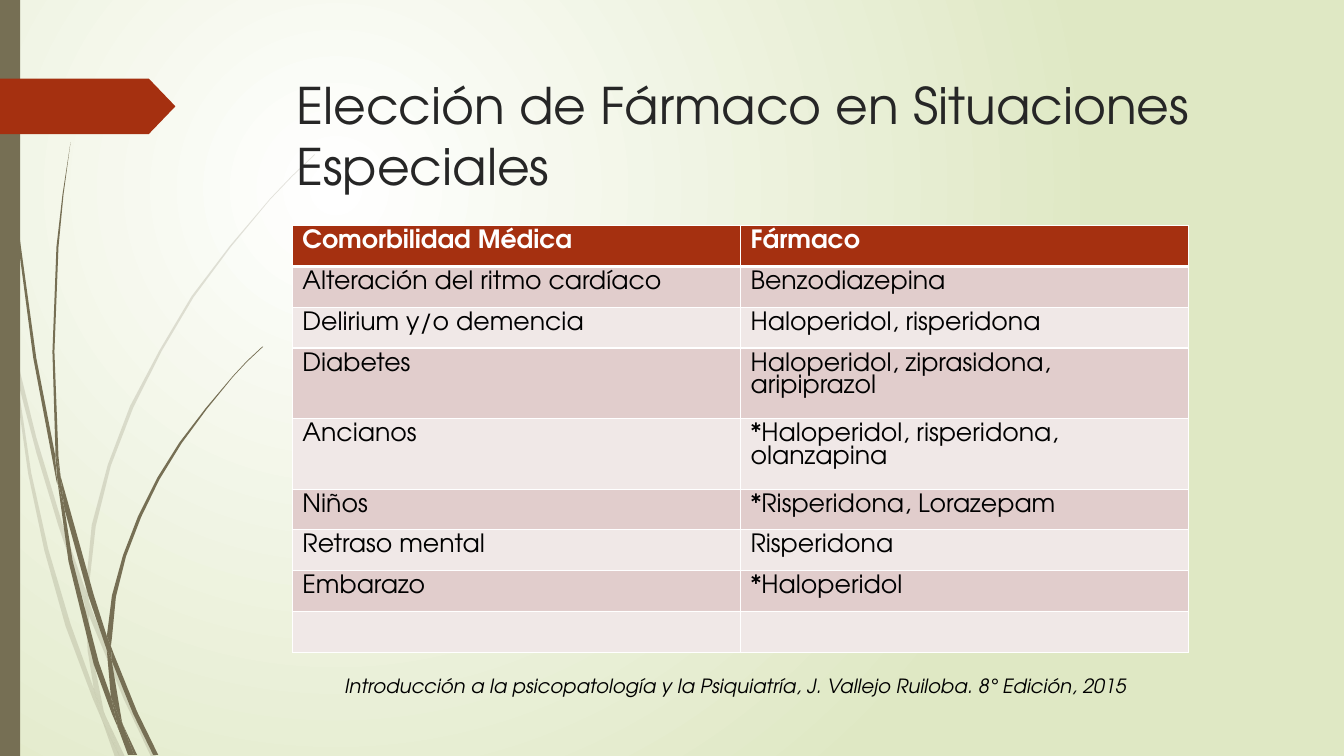
import pptx
import pptx.util
import pptx.dml.color
import pptx.enum.shapes
import pptx.oxml
import pptx.oxml.ns

TITLE = "Elección de Fármaco en Situaciones Especiales"
CITATION = "Introducción a la psicopatología y la Psiquiatría, J. Vallejo Ruiloba. 8° Edición, 2015"
TREATMENTS = [
    ("Comorbilidad Médica", "Fármaco"),
    ("Alteración del ritmo cardíaco", "Benzodiazepina"),
    ("Delirium y/o demencia", "Haloperidol, risperidona"),
    ("Diabetes", "Haloperidol, ziprasidona, aripiprazol"),
    ("Ancianos", "*Haloperidol, risperidona, olanzapina"),
    ("Niños", "*Risperidona, Lorazepam"),
    ("Retraso mental", "Risperidona"),
    ("Embarazo", "*Haloperidol"),
    ("", ""),
]
TWO_LINE_ROWS = (3, 4)
COLORS = {
    "white": "FFFFFF", "meadow": "DFE8C4", "olive": "766F54", "rust": "A53010",
    "odd": "E1CDCC", "even": "F0E8E7", "title": "262626", "black": "000000",
}
FONT = "TeX Gyre Adventor"
PALE_GRASS = [
    [(0.11, 3.5), (0.09, 3.22), (0, 2.82), (0, 2.99), (0.1, 3.44)],
    [(0.58, 5.22), (0.84, 5.99), (0.85, 5.86), (0.62, 5.2), (0.36, 4.34), (0.14, 3.45),
     (0.17, 3.76), (0.36, 4.49)],
    [(0.92, 6.07), (0.88, 5.96), (0.88, 6.1), (1.23, 6.94), (1.5, 7.51), (1.55, 7.51),
     (1.27, 6.92)],
    [(1.19, 7.51), (1.24, 7.51), (1.05, 7.11)],
    [(0.93, 6.83), (0.7, 6.19), (0.48, 5.45), (0.31, 4.69), (0.17, 3.76), (0.11, 3.5),
     (0.28, 4.7), (0.44, 5.46), (0.65, 6.21), (0.92, 6.93), (1.01, 7.14), (0.99, 7.07)],
    [(0.84, 5.99), (0.87, 6.46), (0.93, 6.83), (0.96, 6.92), (1.05, 7.11), (1.03, 7.06),
     (0.91, 6.46), (0.88, 6.1), (0.88, 6.08)],
    [(0.88, 5.84), (0.95, 5.22), (1.1, 4.62), (1.32, 4.05), (1.6, 3.49), (1.92, 2.95),
     (2.29, 2.45), (2.68, 1.98), (2.9, 1.75), (3.12, 1.54), (3.12, 1.53), (2.89, 1.75),
     (2.68, 1.97), (2.28, 2.44), (1.9, 2.94), (1.58, 3.48), (1.29, 4.03), (1.07, 4.61),
     (0.91, 5.21), (0.85, 5.84), (0.85, 5.86), (0.88, 5.96)],
    [(1.01, 7.14), (1.14, 7.51), (1.19, 7.51)],
    [(0.88, 6.08), (0.88, 6.1), (0.88, 5.96), (0.85, 5.86), (0.84, 5.99)],
    [(0.96, 6.92), (0.93, 6.83), (0.99, 7.07), (1.01, 7.14), (1.19, 7.51), (1.05, 7.11)],
]
SOLID_GRASS = [
    [(0.07, 1.1), (0.17, 2.33), (0.33, 3.55), (0.56, 4.77), (0.57, 4.81), (0.55, 4.57),
     (0.55, 4.53), (0.36, 3.55), (0.19, 2.32), (0.08, 1.09), (0.05, 0.48), (0.04, 0),
     (0.03, 0), (0.04, 0.48)],
    [(0.88, 5.92), (1.06, 6.45), (1.06, 6.33), (1.06, 6.31), (0.93, 5.9), (0.6, 4.72),
     (0.64, 5.05)],
    [(1.13, 6.49), (1.1, 6.41), (1.11, 6.56), (1.32, 7.08), (1.52, 7.49), (1.57, 7.49),
     (1.36, 7.06)],
    [(1.1, 6.91), (0.98, 6.57), (0.72, 5.56), (0.64, 5.05), (0.57, 4.77), (0.68, 5.57),
     (0.93, 6.59), (1.11, 7.08), (1.17, 7.22), (1.16, 7.17)],
    [(0.6, 4.72), (0.58, 4.53), (0.54, 3.49), (0.58, 2.45), (0.63, 1.93), (0.7, 1.41),
     (0.62, 1.93), (0.56, 2.45), (0.52, 3.49), (0.55, 4.49)],
    [(1.33, 7.49), (1.36, 7.49), (1.22, 7.19)],
    [(0.57, 4.77), (0.64, 5.05), (0.6, 4.72), (0.55, 4.49), (0.55, 4.53)],
    [(1.11, 6.33), (1.15, 5.92), (1.25, 5.52), (1.4, 5.13), (1.58, 4.76), (1.8, 4.4),
     (2.05, 4.06), (2.31, 3.74), (2.45, 3.59), (2.61, 3.44), (2.6, 3.44), (2.45, 3.58),
     (2.31, 3.73), (2.04, 4.05), (1.78, 4.39), (1.56, 4.74), (1.37, 5.12), (1.22, 5.51),
     (1.11, 5.91), (1.06, 6.31), (1.1, 6.41)],
    [(1.17, 7.22), (1.27, 7.49), (1.31, 7.49)],
    [(1.06, 6.45), (1.1, 6.91), (1.16, 7.06), (1.22, 7.19), (1.21, 7.16), (1.11, 6.56),
     (1.09, 6.51)],
    [(1.06, 6.45), (1.09, 6.51), (1.11, 6.56), (1.1, 6.41), (1.06, 6.31), (1.06, 6.33)],
    [(1.16, 7.06), (1.1, 6.91), (1.16, 7.17), (1.17, 7.22), (1.3, 7.49), (1.33, 7.49),
     (1.22, 7.19)],
]
HUNDREDTHS = 100

inch = pptx.util.Inches
deck = pptx.Presentation()
deck.slide_width, deck.slide_height = inch(13.33), inch(7.5)
slide = deck.slides.add_slide(deck.slide_layouts[6])


def rgb(name):
    return pptx.dml.color.RGBColor.from_string(COLORS[name])


def add_xml(parent, tag, **attributes):
    child = pptx.oxml.parse_xml(f"<a:{tag} {pptx.oxml.ns.nsdecls('a')}/>")
    for key, value in attributes.items():
        child.set(key, str(value))
    parent.append(child)
    return child


def write(paragraph, text, color, **style):
    run = paragraph.add_run()
    run.text = text
    for key, value in {"name": FONT, **style}.items():
        setattr(run.font, key, value)
    run.font.color.rgb = rgb(color)


def add_text(text, box, color, **style):
    frame = slide.shapes.add_textbox(*map(inch, box)).text_frame
    frame.word_wrap = True
    write(frame.paragraphs[0], text, color, **style)


def paint(shape, color, opacity=100):
    shape.shadow.inherit = False
    shape.fill.solid()
    shape.fill.fore_color.rgb = rgb(color)
    shape.line.fill.background()
    if opacity < 100:
        hue = shape._element.spPr.find(".//" + pptx.oxml.ns.qn("a:srgbClr"))
        add_xml(hue, "alpha", val=opacity * 1000)


def add_blade(outline, opacity):
    start, *rest = [(x * HUNDREDTHS, y * HUNDREDTHS) for x, y in outline]
    builder = slide.shapes.build_freeform(*start, scale=inch(1) / HUNDREDTHS)
    builder.add_line_segments(rest, close=True)
    paint(builder.convert_to_shape(), "olive", opacity)


def add_border(cell, side, points):
    line = add_xml(cell._tc.get_or_add_tcPr(), side, w=pptx.util.Pt(points))
    add_xml(add_xml(line, "solidFill"), "srgbClr", val=COLORS["white"])


def fill_cell(cell, text, row):
    header = row == 0
    for side in ("lnL", "lnR", "lnT", "lnB"):
        thick = (header and side == "lnB") or (row == 1 and side == "lnT")
        add_border(cell, side, 3 if thick else 1)
    cell.fill.solid()
    cell.fill.fore_color.rgb = rgb("rust" if header else "odd" if row % 2 else "even")
    paragraph = cell.text_frame.paragraphs[0]
    paragraph.line_spacing = 0.96
    if text:
        write(paragraph, text, "white" if header else "black",
              size=pptx.util.Pt(18), bold=header)


backdrop = slide.background.fill
backdrop.gradient()
for stop, position, color in zip(backdrop.gradient_stops, (0, 1), ("white", "meadow")):
    stop.position = position
    stop.color.rgb = rgb(color)
gradient = slide._element.find(".//" + pptx.oxml.ns.qn("a:gradFill"))
gradient.remove(gradient.find(pptx.oxml.ns.qn("a:lin")))
radial = add_xml(gradient, "path", path="circle")
add_xml(radial, "fillToRect", l=50000, t=50000, r=100000, b=100000)

for tuft, opacity in ((PALE_GRASS, 20), (SOLID_GRASS, 100)):
    for outline in tuft:
        add_blade(outline, opacity)

kinds = pptx.enum.shapes.MSO_SHAPE
for kind, box, color in (
    (kinds.RECTANGLE, (0, 0, 0.2, 7.5), "olive"),
    (kinds.PENTAGON, (0, 0.78, 1.74, 0.55), "rust"),
):
    band = slide.shapes.add_shape(kind, *map(inch, box))
    paint(band, color)
band.adjustments[0] = 0.48

add_text(CITATION, (3.32, 6.64, 9.71, 0.34), "black", size=pptx.util.Pt(14), italic=True)

shares = [1.73 if row in TWO_LINE_ROWS else 1 for row in range(len(TREATMENTS))]
table_height = inch(4.23)
table = slide.shapes.add_table(len(TREATMENTS), 2, inch(2.9), inch(2.24),
                               inch(8.89), table_height).table
for row, (texts, share) in enumerate(zip(TREATMENTS, shares)):
    table.rows[row].height = round(table_height * share / sum(shares))
    for column, text in enumerate(texts):
        fill_cell(table.cell(row, column), text, row)

add_text(TITLE, (2.84, 0.69, 9.75, 1.4), "title", size=pptx.util.Pt(36))

deck.save("out.pptx")
